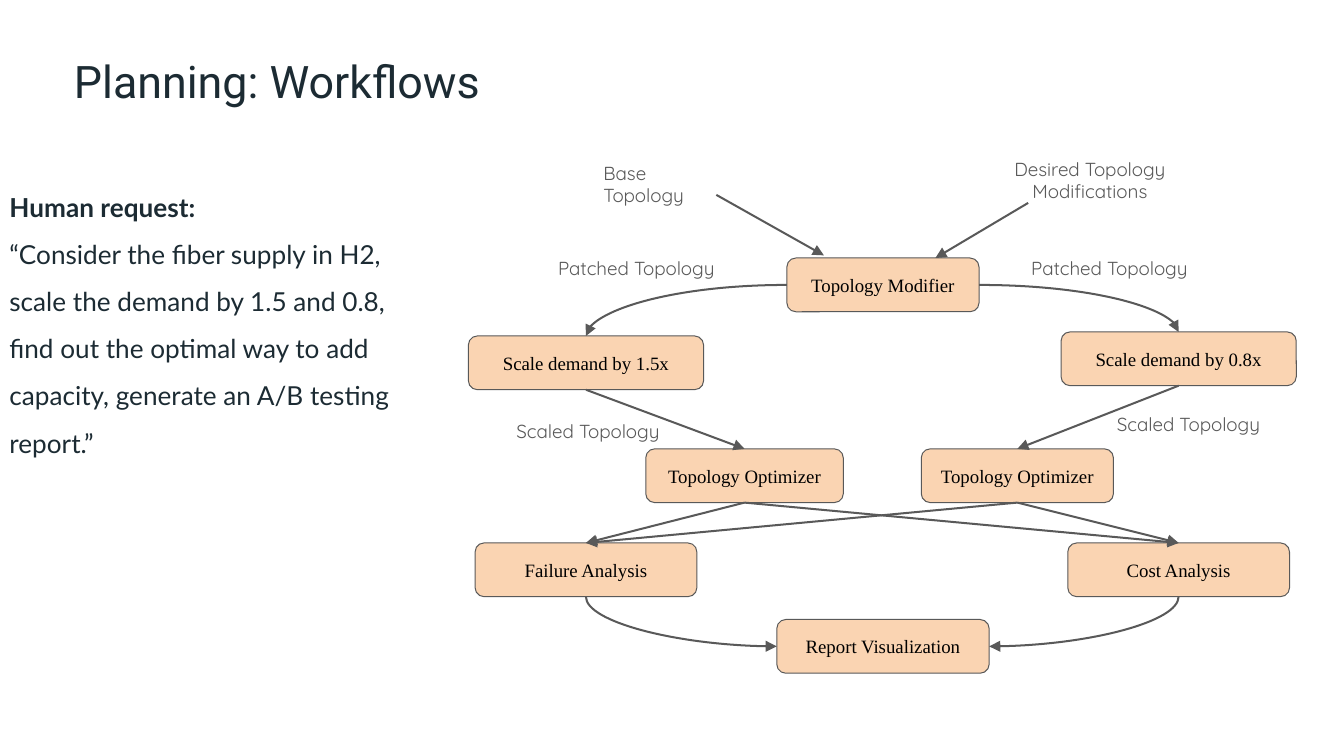
from typing import NamedTuple

from lxml.etree import SubElement
from pptx import Presentation
from pptx.dml.color import RGBColor
from pptx.enum.shapes import MSO_CONNECTOR, MSO_SHAPE
from pptx.enum.text import MSO_ANCHOR, MSO_AUTO_SIZE, PP_ALIGN
from pptx.oxml.ns import qn
from pptx.util import Inches, Pt

INK = RGBColor(0x1C, 0x2B, 0x33)
GRAY = RGBColor(0x59, 0x59, 0x59)
PEACH = RGBColor(0xFA, 0xD4, 0xB2)
BLACK = RGBColor(0, 0, 0)

# Grid of the diagram, in inches: column centres and row tops
COLUMNS = {"left": 4.36, "inner left": 5.54, "middle": 6.57,
           "inner right": 7.57, "right": 8.77}
ROWS = {"modify": 1.92, "scale": 2.49, "optimize": 3.34, "analyze": 4.04,
        "report": 4.61}
STEP_HEIGHT = 0.4

# Connection sites of a rounded rectangle
TOP, LEFT, BOTTOM, RIGHT = range(4)

TITLE_FONT = {"name": "Roboto", "size": Pt(24), "bold": False}
REQUEST_FONT = {"name": "Lato", "size": Pt(14)}
STEP_FONT = {"name": "Times New Roman", "size": Pt(10.1)}
LABEL_FONT = {"name": "Quicksand", "size": Pt(10.1)}


class Step(NamedTuple):
    text: str
    column: str
    row: str
    width: float
    shift: float = 0


class Label(NamedTuple):
    text: str
    left: float
    top: float
    width: float
    height: float
    align: PP_ALIGN = PP_ALIGN.CENTER


class Link(NamedTuple):
    start: str
    start_site: int
    end: str
    end_site: int
    curved: bool = False
    arrow: str = "tailEnd"


STEPS = {
    "modifier": Step("Topology Modifier", "middle", "modify", 1.43),
    "scale up": Step("Scale demand by 1.5x", "left", "scale", 1.75, 0.01),
    "scale down": Step("Scale demand by 0.8x", "right", "scale", 1.75, -0.02),
    "optimizer A": Step("Topology Optimizer", "inner left", "optimize", 1.47),
    "optimizer B": Step("Topology Optimizer", "inner right", "optimize", 1.43),
    "failure": Step("Failure Analysis", "left", "analyze", 1.65),
    "cost": Step("Cost Analysis", "right", "analyze", 1.65),
    "report": Step("Report Visualization", "middle", "report", 1.58),
}
LINKS = [
    Link("modifier", LEFT, "scale up", TOP, curved=True),
    Link("modifier", RIGHT, "scale down", TOP, curved=True),
    Link("scale up", BOTTOM, "optimizer A", TOP),
    Link("scale down", BOTTOM, "optimizer B", TOP),
    *(Link(optimizer, BOTTOM, analysis, TOP)
      for optimizer in ("optimizer A", "optimizer B")
      for analysis in ("failure", "cost")),
    # Drawn from the report, so that the curve leaves it sideways
    Link("report", LEFT, "failure", BOTTOM, True, "headEnd"),
    Link("report", RIGHT, "cost", BOTTOM, True, "headEnd"),
]
INPUT_ARROWS = [(5.33, 1.45, 6.13, 1.9), (7.65, 1.51, 6.96, 1.92)]
LABELS = [
    Label("Base Topology", 4.42, 1.13, 1.04, 0.49, PP_ALIGN.LEFT),
    Label("Desired Topology Modifications", 7.16, 1.1, 1.9, 0.49),
    Label("Patched Topology", 3.77, 1.84, 1.93, 0.32),
    Label("Patched Topology", 7.29, 1.84, 1.93, 0.32),
    Label("Scaled Topology", 3.47, 3.05, 1.81, 0.32),
    Label("Scaled Topology", 8.24, 3, 1.35, 0.22, PP_ALIGN.LEFT),
]
REQUEST = [
    "Human request:",
    "“Consider the fiber supply in H2,",
    "scale the demand by 1.5 and 0.8,",
    "find out the optimal way to add capacity, generate an A/B testing report.”",
]


def apply(target, values: dict) -> None:
    for name, value in values.items():
        setattr(target, name, value)


def place(shape, left: float, top: float, width: float, height: float) -> None:
    apply(shape, {"left": Inches(left), "top": Inches(top),
                  "width": Inches(width), "height": Inches(height)})


def format_frame(frame, inset: float, anchor: MSO_ANCHOR) -> None:
    margins = ("margin_left", "margin_top", "margin_right", "margin_bottom")
    apply(frame, dict.fromkeys(margins, Inches(inset)))
    apply(frame, {"word_wrap": True, "auto_size": MSO_AUTO_SIZE.NONE,
                  "vertical_anchor": anchor})


def write(paragraph, text: str, font: dict, color: RGBColor, align: PP_ALIGN) -> None:
    run = paragraph.add_run()
    run.text = text
    paragraph.alignment = align
    apply(run.font, font)
    run.font.color.rgb = color


def add_title(slide, text: str) -> None:
    title = slide.shapes.title
    place(title, 0.55, 0.34, 8.08, 0.46)
    format_frame(title.text_frame, 0, MSO_ANCHOR.MIDDLE)
    paragraph = title.text_frame.paragraphs[0]
    write(paragraph, text, TITLE_FONT, INK, PP_ALIGN.LEFT)
    paragraph.line_spacing = 1.15


def add_request(slide, lines: list[str]) -> None:
    body = slide.placeholders[1]
    place(body, -0.03, 1.21, 3.64, 3.99)
    frame = body.text_frame
    format_frame(frame, 0.1, MSO_ANCHOR.TOP)
    for index, line in enumerate(lines):
        paragraph = frame.add_paragraph() if index else frame.paragraphs[0]
        properties = paragraph._p.get_or_add_pPr()
        properties.set("marL", "0")
        properties.set("indent", "0")
        SubElement(properties, qn("a:buNone"))
        write(paragraph, line, {**REQUEST_FONT, "bold": index == 0}, INK, PP_ALIGN.LEFT)
        apply(paragraph, {"line_spacing": 1.5, "space_before": Pt(0)})


def add_step(slide, step: Step):
    shape = slide.shapes.add_shape(MSO_SHAPE.ROUNDED_RECTANGLE, 0, 0, 0, 0)
    place(shape, COLUMNS[step.column] - step.width / 2,
          ROWS[step.row] + step.shift, step.width, STEP_HEIGHT)
    shape.shadow.inherit = False
    shape.fill.solid()
    shape.fill.fore_color.rgb = PEACH
    shape.line.color.rgb = GRAY
    shape.line.width = Pt(0.54)
    format_frame(shape.text_frame, 0.07, MSO_ANCHOR.MIDDLE)
    write(shape.text_frame.paragraphs[0], step.text, STEP_FONT, BLACK, PP_ALIGN.CENTER)
    return shape


def add_label(slide, label: Label) -> None:
    box = slide.shapes.add_textbox(0, 0, 0, 0)
    place(box, label.left, label.top, label.width, label.height)
    format_frame(box.text_frame, 0.07, MSO_ANCHOR.TOP)
    write(box.text_frame.paragraphs[0], label.text, LABEL_FONT, GRAY, label.align)


def add_arrow(slide, ends=(0, 0, 0, 0), curved: bool = False, arrow: str = "tailEnd"):
    kind = MSO_CONNECTOR.CURVE if curved else MSO_CONNECTOR.STRAIGHT
    connector = slide.shapes.add_connector(kind, *map(Inches, ends))
    connector.line.color.rgb = GRAY
    connector.line.width = Pt(1.08)
    properties = connector._element.spPr
    if curved:
        properties.find(qn("a:prstGeom")).set("prst", "curvedConnector2")
    SubElement(connector.line._get_or_add_ln(), qn(f"a:{arrow}"), type="triangle")
    SubElement(properties, qn("a:effectLst"))
    return connector


def add_link(slide, link: Link, shapes: dict) -> None:
    connector = add_arrow(slide, curved=link.curved, arrow=link.arrow)
    connector.begin_connect(shapes[link.start], link.start_site)
    connector.end_connect(shapes[link.end], link.end_site)


def main() -> None:
    presentation = Presentation()
    presentation.slide_width = Inches(10)
    presentation.slide_height = presentation.slide_width * 9 // 16
    slide = presentation.slides.add_slide(presentation.slide_layouts[1])
    add_title(slide, "Planning: Workflows")
    add_request(slide, REQUEST)
    shapes = {name: add_step(slide, step) for name, step in STEPS.items()}
    for link in LINKS:
        add_link(slide, link, shapes)
    for ends in INPUT_ARROWS:
        add_arrow(slide, ends)
    for label in LABELS:
        add_label(slide, label)
    presentation.save("out.pptx")


if __name__ == "__main__":
    main()
